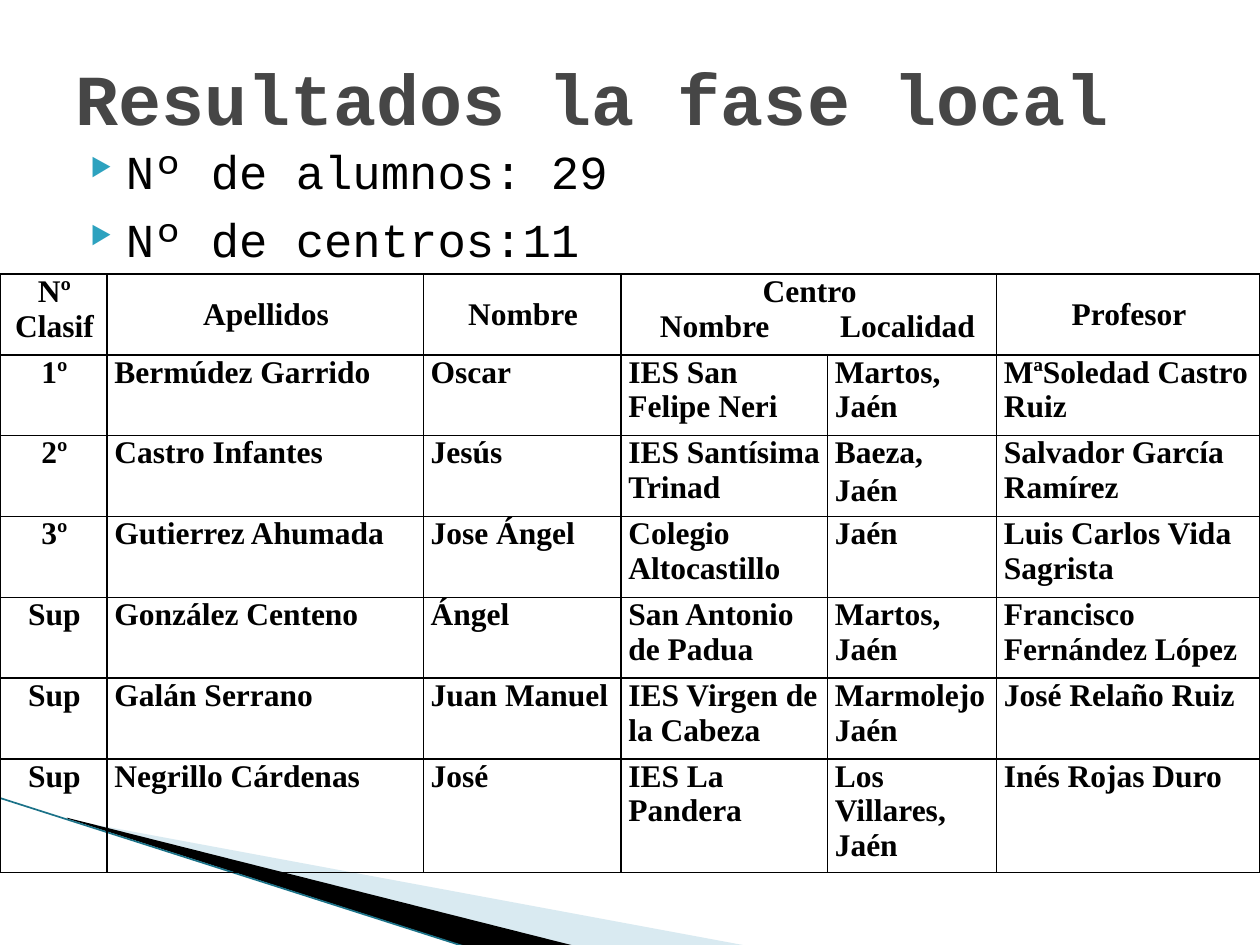
from dataclasses import dataclass

from lxml import etree
from pptx import Presentation
from pptx.dml.color import RGBColor
from pptx.enum.shapes import MSO_CONNECTOR
from pptx.enum.text import MSO_ANCHOR, PP_ALIGN
from pptx.oxml.ns import qn
from pptx.util import Pt

LEFT, CENTER = PP_ALIGN.LEFT, PP_ALIGN.CENTER
TOP, MIDDLE = MSO_ANCHOR.TOP, MSO_ANCHOR.MIDDLE
STRAIGHT = MSO_CONNECTOR.STRAIGHT


@dataclass(frozen=True)
class Theme:
    mono: str = "Courier New"
    serif: str = "Times New Roman"
    black: str = "000000"
    title: str = "464646"
    bullet: str = "2DA2BF"
    pale: str = "A0CBDC"
    edge: str = "1B7288"
    title_size: float = 41
    body_size: float = 27
    table_size: float = 18


THEME = Theme()
COL_WIDTHS = [61.2, 180.7, 113, 118, 96.6, 150.5]
ROW_HEIGHTS = [46.2] * 6 + [60]
HEADERS = ["Nº Clasif", "Apellidos", "Nombre", "Centro\n\tNombre\tLocalidad", None, "Profesor"]
RESULTS = [
    ["1º", "Bermúdez Garrido", "Oscar", "IES San Felipe Neri", "Martos, Jaén", "MªSoledad Castro Ruiz"],
    ["2º", "Castro Infantes", "Jesús", "IES Santísima Trinad", "Baeza,\nJaén", "Salvador García Ramírez"],
    ["3º", "Gutierrez Ahumada", "Jose Ángel", "Colegio Altocastillo", "Jaén", "Luis Carlos Vida Sagrista"],
    ["Sup", "González Centeno", "Ángel", "San Antonio de Padua", "Martos, Jaén", "Francisco Fernández López"],
    ["Sup", "Galán Serrano", "Juan Manuel", "IES Virgen de la Cabeza", "Marmolejo Jaén", "José Relaño Ruiz"],
    ["Sup", "Negrillo Cárdenas", "José", "IES La Pandera", "Los Villares, Jaén", "Inés Rojas Duro"],
]


def sub(parent, tag, **attrs):
    return etree.SubElement(parent, qn(tag), {k: str(v) for k, v in attrs.items()})


def add_bullet(p):
    pPr = p._p.get_or_add_pPr()
    pPr.set("marL", str(Pt(28.8)))
    pPr.set("indent", str(Pt(-20.2)))
    sub(sub(pPr, "a:buClr"), "a:srgbClr", val=THEME.bullet)
    sub(pPr, "a:buSzPct", val=52000)
    sub(pPr, "a:buChar", char="▶")


def add_tabs(p, stops):
    tabs = sub(p._p.get_or_add_pPr(), "a:tabLst")
    for stop in stops:
        sub(tabs, "a:tab", pos=Pt(stop), algn="l")


def write_text(tf, text, *, font, size, color=THEME.black, bold=False,
               align=LEFT, gap=0, bullet=False, tabs=()):
    tf.word_wrap = True
    for i, line in enumerate(text.split("\n")):
        p = tf.paragraphs[0] if i == 0 else tf.add_paragraph()
        if bullet:
            add_bullet(p)
        if "\t" in line:
            add_tabs(p, tabs)
        p.alignment = LEFT if "\t" in line else align
        if i and gap:
            p.space_before = Pt(gap)
        r = p.add_run()
        r.text = line
        r.font.name, r.font.size, r.font.bold = font, Pt(size), bold
        r.font.color.rgb = RGBColor.from_string(color)


def add_text(s, box, text, anchor=TOP, **fmt):
    tf = s.shapes.add_textbox(*map(Pt, box)).text_frame
    tf.vertical_anchor = anchor
    write_text(tf, text, **fmt)


def add_wedge(s, points, color, alpha=None):
    start, *rest = [(Pt(x), Pt(y)) for x, y in points]
    fb = s.shapes.build_freeform(*start, scale=1.0)
    fb.add_line_segments(rest, close=True)
    sp = fb.convert_to_shape()
    sp.shadow.inherit = False
    sp.line.fill.background()
    sp.fill.solid()
    sp.fill.fore_color.rgb = RGBColor.from_string(color)
    if alpha:
        clr = sp._element.spPr.find(".//" + qn("a:srgbClr"))
        sub(clr, "a:alpha", val=alpha * 1000)


def add_line(s, x1, y1, x2, y2, color, width):
    line = s.shapes.add_connector(STRAIGHT, Pt(x1), Pt(y1), Pt(x2), Pt(y2))
    line.line.color.rgb = RGBColor.from_string(color)
    line.line.width = Pt(width)
    sub(line._element.spPr, "a:effectLst")


def style_cell(cell, anchor):
    tcPr = cell._tc.get_or_add_tcPr()
    for side in ("a:lnL", "a:lnR", "a:lnT", "a:lnB"):
        ln = sub(tcPr, side, w=Pt(1))
        sub(sub(ln, "a:solidFill"), "a:srgbClr", val=THEME.black)
    cell.fill.background()
    cell.margin_left, cell.margin_right = Pt(4.2), Pt(3.2)
    cell.margin_top = cell.margin_bottom = 0
    cell.vertical_anchor = anchor


def add_results_table(s, x, y):
    rows = [HEADERS] + RESULTS
    frame = s.shapes.add_table(len(rows), len(HEADERS), Pt(x), Pt(y),
                               Pt(sum(COL_WIDTHS)), Pt(sum(ROW_HEIGHTS)))
    table = frame.table
    table.first_row = table.horz_banding = False
    for col, width in zip(table.columns, COL_WIDTHS):
        col.width = Pt(width)
    for row, height in zip(table.rows, ROW_HEIGHTS):
        row.height = Pt(height)
    table.cell(0, 3).merge(table.cell(0, 4))
    for i, row in enumerate(rows):
        for j, text in enumerate(row):
            cell = table.cell(i, j)
            style_cell(cell, MIDDLE if i == 0 and j in (1, 2, 5) else TOP)
            if text:
                write_text(cell.text_frame, text, font=THEME.serif, size=THEME.table_size,
                           bold=True, align=CENTER if i == 0 or j == 0 else LEFT,
                           gap=1.4 if i else 0, tabs=(18, 121))


def main():
    prs = Presentation()
    prs.slide_width, prs.slide_height = Pt(720), Pt(540)
    s = prs.slides.add_slide(prs.slide_layouts[6])
    add_wedge(s, [(39.6, 468.5), (428.4, 540.7), (328.3, 540.7), (39.6, 468)], THEME.pale, 40)
    add_wedge(s, [(38.2, 467.3), (329, 540.7), (267.8, 541.4), (38.9, 468)], THEME.black)
    add_line(s, -0.7, 455.8, 267.1, 541.4, THEME.edge, 0.95)
    add_text(s, (36, 78, 648, 395), "Nº de alumnos: 29\nNº de centros:11",
             font=THEME.mono, size=THEME.body_size, gap=6, bullet=True)
    add_text(s, (36, 21.6, 648, 67), "Resultados la fase local", MIDDLE,
             font=THEME.mono, size=THEME.title_size, color=THEME.title, bold=True)
    add_results_table(s, 0, 156.6)
    prs.save("out.pptx")


if __name__ == "__main__":
    main()
